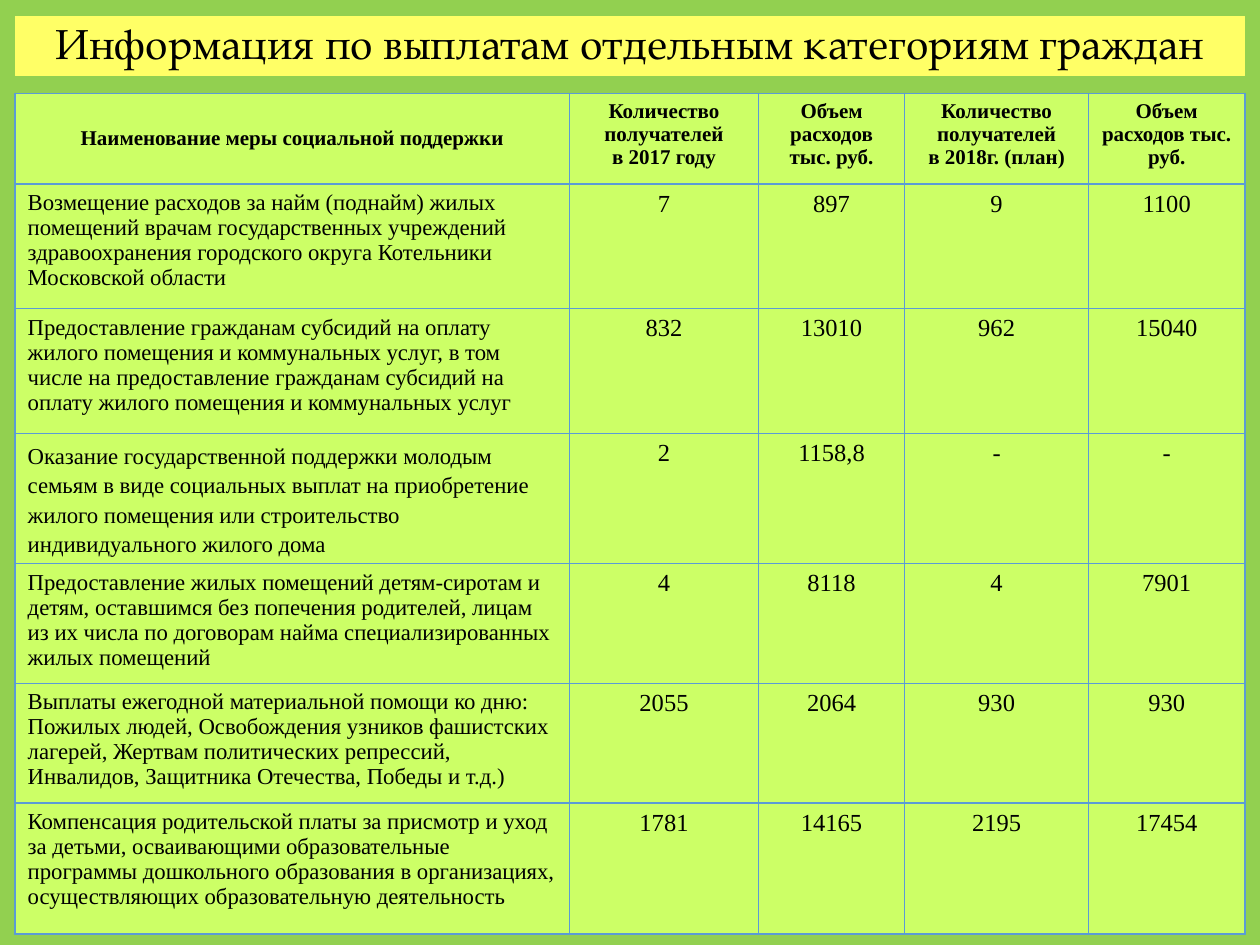
"""Build a slide with a table of payments to categories of citizens."""
from lxml import etree
from pptx import Presentation
from pptx.dml.color import RGBColor
from pptx.enum.shapes import MSO_SHAPE
from pptx.enum.text import MSO_ANCHOR, PP_ALIGN
from pptx.oxml.ns import qn
from pptx.util import Inches, Pt

RECT = MSO_SHAPE.RECTANGLE
TOP, MIDDLE = MSO_ANCHOR.TOP, MSO_ANCHOR.MIDDLE
LEFT, CENTER = PP_ALIGN.LEFT, PP_ALIGN.CENTER

TITLE = "Информация по выплатам отдельным категориям граждан"
HEADER = [
    "Наименование меры социальной поддержки",
    "Количество получателей\nв 2017 году",
    "Объем расходов тыс. руб.",
    "Количество получателей\nв 2018г. (план)",
    "Объем расходов тыс. руб.",
]
MEASURES = [
    ("Возмещение расходов за найм (поднайм) жилых помещений врачам государственных "
     "учреждений здравоохранения городского округа Котельники Московской области",
     "7", "897", "9", "1100"),
    ("Предоставление гражданам субсидий на оплату жилого помещения и коммунальных услуг, "
     "в том числе на предоставление гражданам субсидий на оплату жилого помещения и "
     "коммунальных услуг",
     "832", "13010", "962", "15040"),
    ("Оказание государственной поддержки молодым семьям в виде социальных выплат на "
     "приобретение жилого помещения или строительство индивидуального жилого дома",
     "2", "1158,8", "-", "-"),
    ("Предоставление жилых помещений детям-сиротам и детям, оставшимся без попечения "
     "родителей, лицам из их числа по договорам найма специализированных жилых помещений",
     "4", "8118", "4", "7901"),
    ("Выплаты ежегодной материальной помощи ко дню: Пожилых людей, Освобождения узников "
     "фашистских лагерей, Жертвам политических репрессий, Инвалидов, Защитника Отечества, "
     "Победы и т.д.)",
     "2055", "2064", "930", "930"),
    ("Компенсация родительской платы за присмотр и уход за детьми, осваивающими "
     "образовательные программы дошкольного образования в организациях, осуществляющих "
     "образовательную деятельность",
     "1781", "14165", "2195", "17454"),
]
COLS = [4.4, 1.5, 1.16, 1.46, 1.24]
ROWS = [0.72, 0.99, 0.99, 1.03, 0.95, 0.95, 1.04]
MARGIN, TITLE_TOP, TITLE_HEIGHT, TABLE_TOP = 0.12, 0.13, 0.47, 0.74
LOOSE_ROW = 3
GREEN, YELLOW, LIME, BLUE = "92D050", "FFFF66", "CCFF66", "5B9BD5"
HEAD_FONT = {"name": "Times New Roman", "size": Pt(12), "bold": True}
NAME_FONT = {"name": "Times New Roman", "size": Pt(13), "bold": False}
VALUE_FONT = {"name": "Times New Roman", "size": Pt(14), "bold": False}
TITLE_FONT = {"name": "TeX Gyre Pagella", "size": Pt(24)}


def paint(fill, color):
    """Make a fill solid in a hex colour."""
    fill.solid()
    fill.fore_color.rgb = RGBColor.from_string(color)


def write(tf, text, font, align, spacing=None):
    """Write each line of text as a formatted paragraph."""
    for i, line in enumerate(text.split("\n")):
        p = tf.add_paragraph() if i else tf.paragraphs[0]
        p.alignment, p.line_spacing = align, spacing
        r = p.add_run()
        r.text = line
        for key, value in font.items():
            setattr(r.font, key, value)
        r.font.color.rgb = RGBColor.from_string("000000")


def add_borders(cell, color, points):
    """Put the same line on all four sides of a cell."""
    props = cell._tc.get_or_add_tcPr()
    for i, side in enumerate(("lnL", "lnR", "lnT", "lnB")):
        ln = etree.Element(qn(f"a:{side}"), w=str(Pt(points)))
        fill = etree.SubElement(ln, qn("a:solidFill"))
        etree.SubElement(fill, qn("a:srgbClr"), val=color)
        props.insert(i, ln)


def add_title(s):
    """Add the title bar."""
    sp = s.shapes.add_shape(RECT, Inches(MARGIN), Inches(TITLE_TOP),
                            Inches(sum(COLS)), Inches(TITLE_HEIGHT))
    sp.shadow.inherit = False
    paint(sp.fill, YELLOW)
    paint(sp.line.fill, YELLOW)
    sp.line.width = Pt(0.5)
    tf = sp.text_frame
    tf.word_wrap, tf.vertical_anchor = True, MIDDLE
    write(tf, TITLE, TITLE_FONT, CENTER, 0.9)


def add_payments(s):
    """Add the table of measures and amounts."""
    table = s.shapes.add_table(len(ROWS), len(COLS), Inches(MARGIN), Inches(TABLE_TOP),
                               Inches(sum(COLS)), Inches(sum(ROWS))).table
    for column, width in zip(table.columns, COLS):
        column.width = Inches(width)
    for row, height in zip(table.rows, ROWS):
        row.height = Inches(height)
    for i, texts in enumerate([HEADER, *MEASURES]):
        for j, text in enumerate(texts):
            cell = table.cell(i, j)
            is_name = i > 0 and j == 0
            font = HEAD_FONT if i == 0 else NAME_FONT if is_name else VALUE_FONT
            spacing = Pt(16.8) if is_name and i == LOOSE_ROW else None
            paint(cell.fill, LIME)
            add_borders(cell, BLUE, 1)
            cell.vertical_anchor = MIDDLE if i == j == 0 else TOP
            write(cell.text_frame, text, font, LEFT if is_name else CENTER, spacing)


def main():
    """Build and save the slide."""
    prs = Presentation()
    prs.slide_width, prs.slide_height = Inches(10), Inches(7.5)
    s = prs.slides.add_slide(prs.slide_layouts[6])
    paint(s.background.fill, GREEN)
    add_title(s)
    add_payments(s)
    prs.save("out.pptx")


if __name__ == "__main__":
    main()
